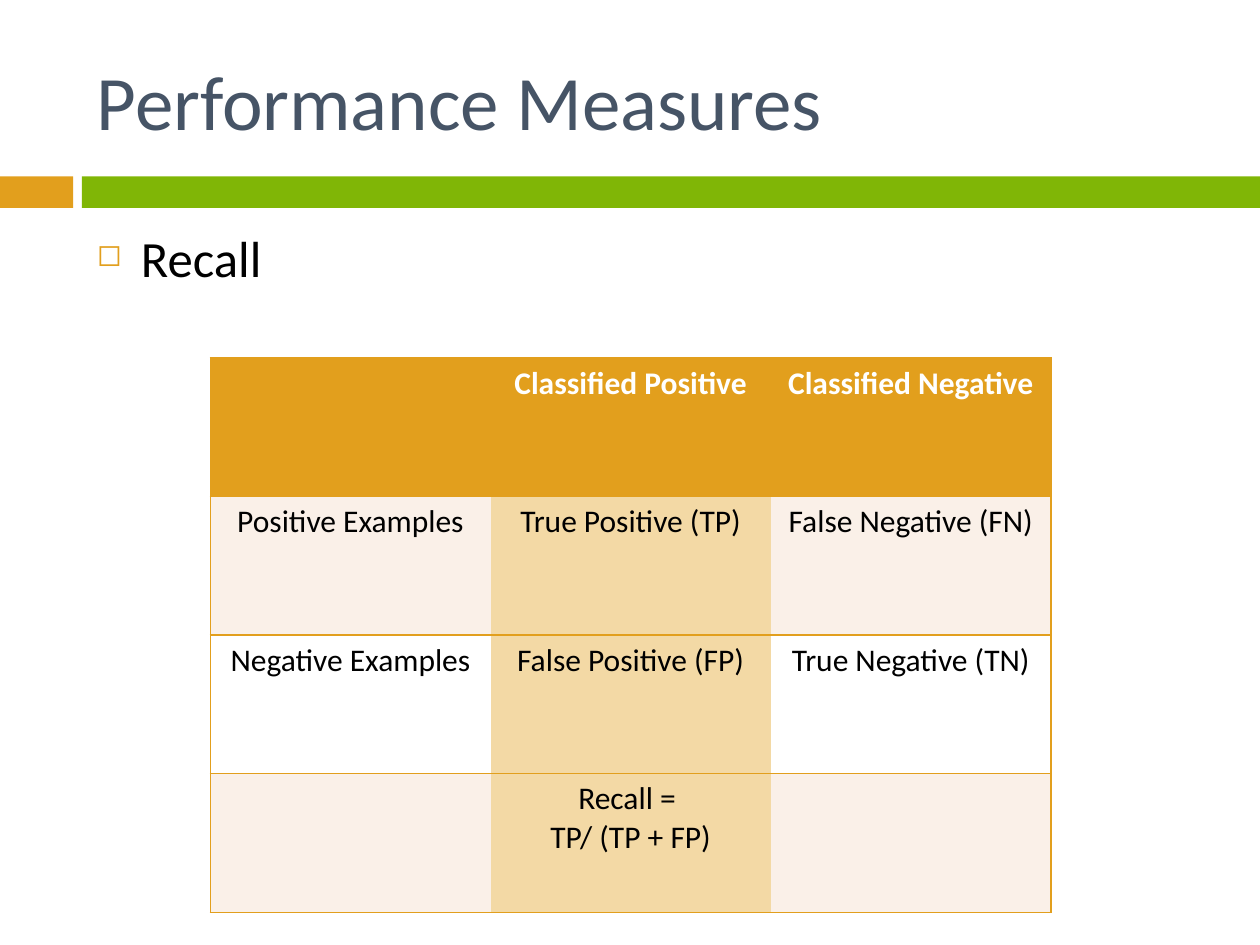
"""Build the Performance Measures slide with its recall table."""
from lxml.etree import SubElement as Sub
from pptx import Presentation
from pptx.dml.color import RGBColor as RGB
from pptx.enum.shapes import MSO_SHAPE as Shape
from pptx.enum.text import MSO_ANCHOR as Anchor, PP_ALIGN as Align
from pptx.oxml.ns import qn
from pptx.util import Inches, Pt

HUES = {"gold": "E29F1D", "green": "80B606", "slate": "465466", "black": "000000",
        "white": "FFFFFF", "cream": "FAF0E8", "sand": "F3D9A5"}


def style(para, hue, **form):
    para.font.color.rgb = RGB.from_string(HUES[hue])
    for key, val in {"name": "Calibri", **form}.items():
        setattr(para.font, key, val)


def add_text(top, high, text, anchor):
    box = slide.shapes.add_textbox(Inches(0.67), Inches(top), Inches(8.92), Inches(high))
    frame = box.text_frame
    for key, val in {"word_wrap": True, "vertical_anchor": anchor, "text": text}.items():
        setattr(frame, key, val)
    return frame.paragraphs[0]


deck = Presentation()
deck.slide_width, deck.slide_height = Inches(10), Inches(7.5)
slide = deck.slides.add_slide(deck.slide_layouts[6])

for left, wide, hue in [(0, 0.58, "gold"), (0.65, 9.35, "green")]:
    bar = slide.shapes.add_shape(Shape.RECTANGLE, Inches(left), Inches(1.4),
                                 Inches(wide), Inches(0.25))
    bar.shadow.inherit = False
    bar.fill.solid()
    bar.fill.fore_color.rgb = RGB.from_string(HUES[hue])
    bar.line.fill.background()

title = add_text(0.25, 1.08, "Performance Measures", Anchor.MIDDLE)
style(title, "slate", size=Pt(44))

point = add_text(1.75, 4.92, "Recall", Anchor.TOP)
style(point, "black", size=Pt(29))
point.space_before = Pt(7)
props = point._p.get_or_add_pPr()
props.set("marL", str(Inches(0.35)))
props.set("indent", str(Inches(-0.35)))
tint = Sub(props, qn("a:buClr"))
Sub(tint, qn("a:srgbClr"), val=HUES["gold"])
Sub(props, qn("a:buSzPct"), val="60000")
Sub(props, qn("a:buChar"), char="◻")

rows = [
    ["", "Classified Positive", "Classified Negative"],
    ["Positive Examples", "True Positive (TP)", "False Negative (FN)"],
    ["Negative Examples", "False Positive (FP)", "True Negative (TN)"],
    ["", "Recall = \nTP/ (TP + FP)", ""],
]
table = slide.shapes.add_table(4, 3, Inches(1.67), Inches(2.84),
                               Inches(6.67), Inches(4.4)).table
for r, row in enumerate(rows):
    for c, text in enumerate(row):
        cell = table.cell(r, c)
        cell.text = text
        head = r == 0
        for para in cell.text_frame.paragraphs:
            para.alignment = Align.CENTER
            style(para, "white" if head else "black", size=Pt(18), bold=head)
        edges = {"L": c == 0, "R": c == 2, "T": True, "B": True}
        for side, shown in edges.items():
            line = Sub(cell._tc.get_or_add_tcPr(), qn(f"a:ln{side}"), w=str(Pt(1)))
            if shown:
                Sub(Sub(line, qn("a:solidFill")), qn("a:srgbClr"), val=HUES["gold"])
            else:
                Sub(line, qn("a:noFill"))
        band = "cream" if r % 2 else "white"
        hue = "gold" if head else "sand" if c == 1 else band
        cell.fill.solid()
        cell.fill.fore_color.rgb = RGB.from_string(HUES[hue])

deck.save("out.pptx")
